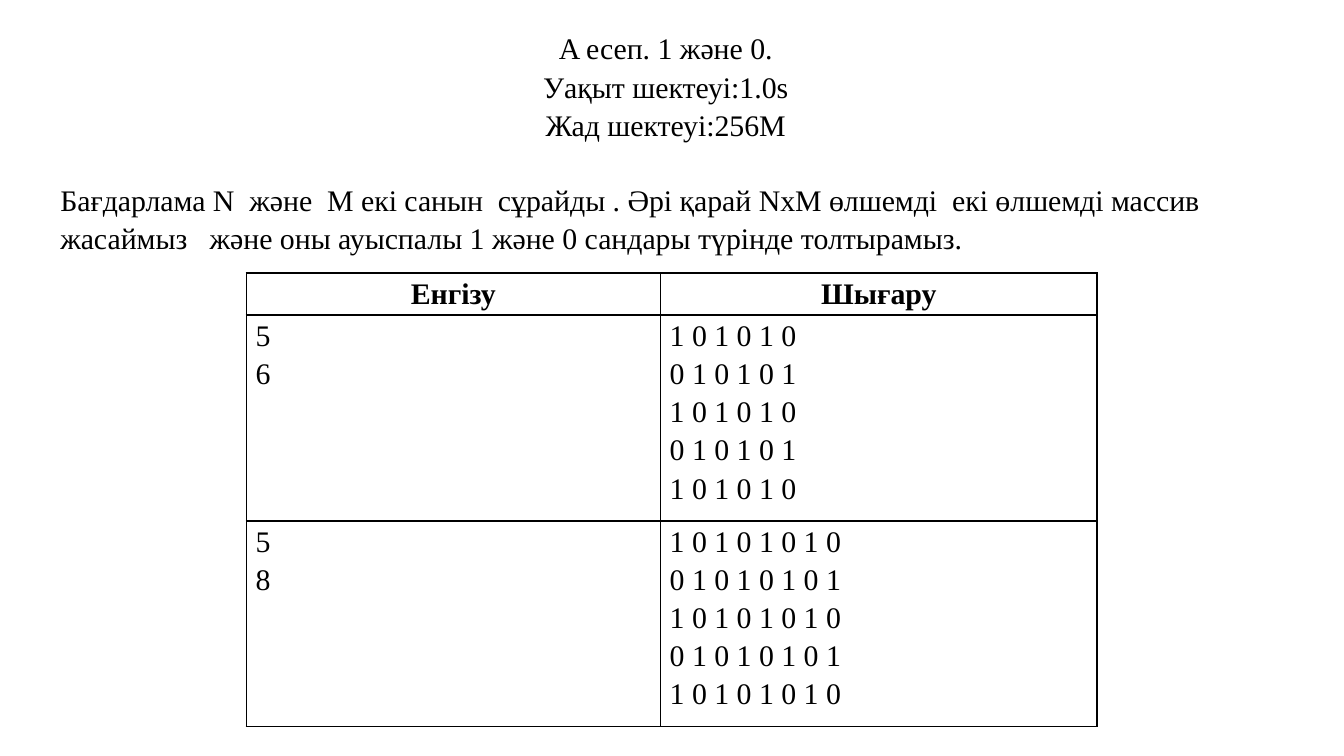
"""Builds a slide stating the alternating 1 and 0 matrix task with its sample data."""
from lxml.etree import SubElement
from pptx import Presentation
from pptx.dml.color import RGBColor as RGB
from pptx.enum.text import MSO_AUTO_SIZE as AUTO, PP_ALIGN as AL
from pptx.oxml.ns import qn
from pptx.util import Pt

COLORS = {"text": "000000", "border": "000000"}


def write(tf, lines, align, spacing, bold=False):
    for i, line in enumerate(lines):
        p = tf.paragraphs[0] if i == 0 else tf.add_paragraph()
        p.alignment, p.line_spacing = align, spacing
        r = p.add_run()
        r.text = line
        for name, value in {"name": "Times New Roman", "size": Pt(16), "bold": bold}.items():
            setattr(r.font, name, value)
        r.font.color.rgb = RGB.from_string(COLORS["text"])


def add_borders(cell):
    tc_pr = cell._tc.get_or_add_tcPr()
    for side in ("lnL", "lnR", "lnT", "lnB"):
        ln = SubElement(tc_pr, qn(f"a:{side}"), w=str(Pt(1)))
        fill = SubElement(ln, qn("a:solidFill"))
        SubElement(fill, qn("a:srgbClr"), val=COLORS["border"])


prs = Presentation()
prs.slide_width, prs.slide_height = Pt(720), Pt(405)
s = prs.slides.add_slide(prs.slide_layouts[6])

tf = s.shapes.add_textbox(Pt(25.2), Pt(10.8), Pt(663), Pt(123.8)).text_frame
tf.word_wrap = True
tf.auto_size = AUTO.SHAPE_TO_FIT_TEXT
write(tf, ["A есеп. 1 және 0.", "Уақыт шектеуі:1.0s", "Жад шектеуі:256M",
           "Бағдарлама N  және  M екі санын  сұрайды . Әрі қарай NxM өлшемді  екі өлшемді массив "
           "жасаймыз   және оны ауыспалы 1 және 0 сандары түрінде толтырамыз."], AL.CENTER, 1.08)
task = tf.paragraphs[-1]
task.alignment, task.space_before = AL.LEFT, Pt(19.15)

rows = [(["Енгізу"], ["Шығару"])]
for n, m in ((5, 6), (5, 8)):
    matrix = [" ".join(str((i + j + 1) % 2) for j in range(m)) for i in range(n)]
    rows.append(([str(n), str(m)], matrix))

table = s.shapes.add_table(3, 2, Pt(132), Pt(146.2), Pt(455.8), Pt(243.1)).table
table.first_row = table.horz_banding = False
for col, width in zip(table.columns, (221.8, 234)):
    col.width = Pt(width)
for row, height in zip(table.rows, (22.5, 110.3, 110.3)):
    row.height = Pt(height)

margins = {"margin_left": Pt(5), "margin_right": Pt(5), "margin_top": 0, "margin_bottom": 0}
for i, row in enumerate(rows):
    for j, lines in enumerate(row):
        cell = table.cell(i, j)
        for name, value in margins.items():
            setattr(cell, name, value)
        write(cell.text_frame, lines, AL.LEFT if i else AL.CENTER, 1.15, bold=i == 0)
        add_borders(cell)
        cell.fill.background()

prs.save("out.pptx")
